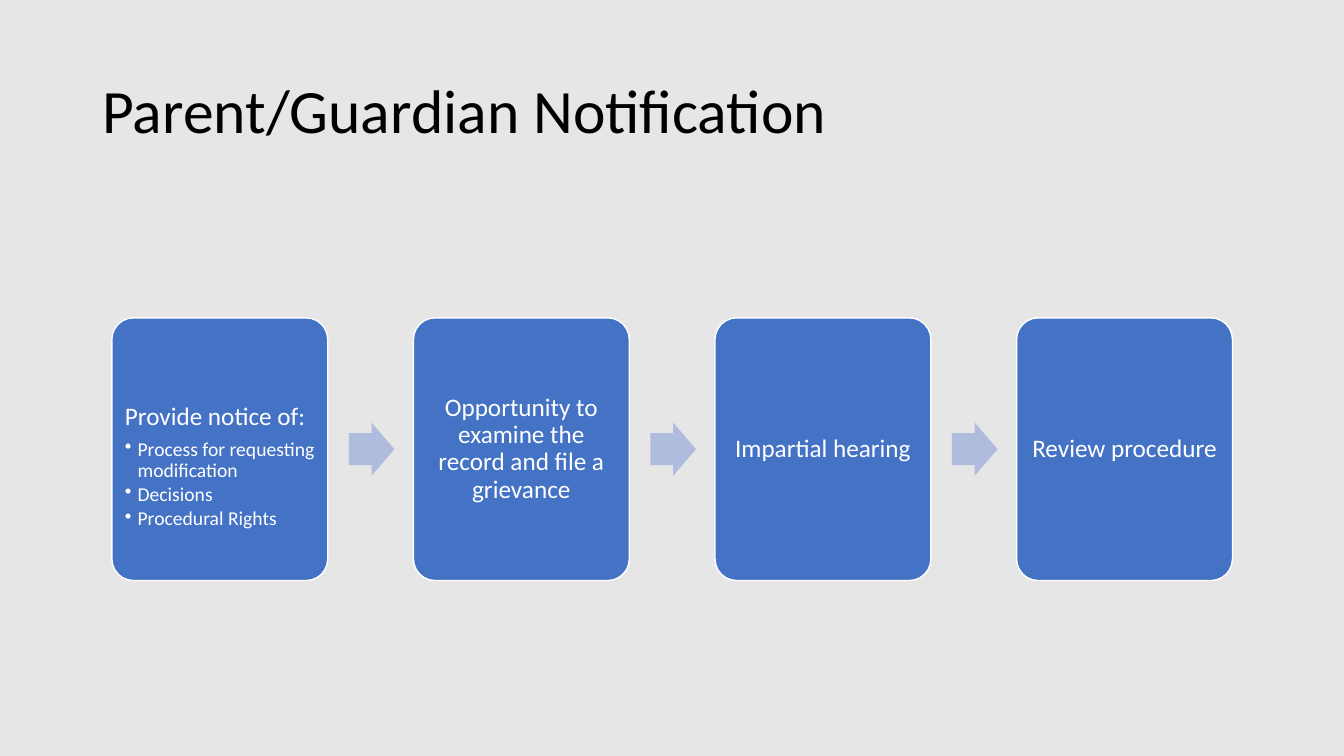
from dataclasses import dataclass

from lxml import etree
from pptx import Presentation
from pptx.dml.color import RGBColor
from pptx.enum.shapes import MSO_SHAPE
from pptx.enum.text import MSO_ANCHOR, PP_ALIGN
from pptx.oxml.ns import qn
from pptx.util import Cm, Pt

ROUNDED, ARROW = MSO_SHAPE.ROUNDED_RECTANGLE, MSO_SHAPE.RIGHT_ARROW
TOP, MIDDLE = MSO_ANCHOR.TOP, MSO_ANCHOR.MIDDLE
LEFT, CENTER = PP_ALIGN.LEFT, PP_ALIGN.CENTER


@dataclass(frozen=True)
class Theme:
    font: str = "Calibri"
    background: str = "E7E6E6"
    card: str = "4472C4"
    arrow: str = "B0BCDE"
    light: str = "FFFFFF"
    dark: str = "000000"
    title_size: int = 44
    body_size: int = 18
    bullet_size: int = 14


class Deck:
    def __init__(self, theme):
        self.theme = theme
        self.prs = Presentation()
        self.prs.slide_width, self.prs.slide_height = Cm(33.87), Cm(19.05)
        self.s = self.prs.slides.add_slide(self.prs.slide_layouts[6])
        self.paint(self.s.background.fill, theme.background)

    def paint(self, fill, color):
        fill.solid()
        fill.fore_color.rgb = RGBColor.from_string(color)

    def set_text(self, p, text, size, color, align=LEFT, after=0):
        p.text = text
        p.alignment = align
        p.line_spacing = 0.9
        p.space_after = Pt(after)
        font = p.runs[0].font
        font.name, font.size = self.theme.font, Pt(size)
        font.color.rgb = RGBColor.from_string(color)

    def title(self, text, x, y, w, h):
        tf = self.s.shapes.add_textbox(Cm(x), Cm(y), Cm(w), Cm(h)).text_frame
        tf.word_wrap = True
        tf.vertical_anchor = MIDDLE
        self.set_text(tf.paragraphs[0], text, self.theme.title_size, self.theme.dark)

    def block(self, kind, x, y, w, h, color, adjustments):
        sp = self.s.shapes.add_shape(kind, Cm(x), Cm(y), Cm(w), Cm(h))
        sp.shadow.inherit = False
        for i, value in enumerate(adjustments):
            sp.adjustments[i] = value
        self.paint(sp.fill, color)
        sp.line.fill.background()
        return sp

    def card(self, text, bullets, x, y, w, h):
        t = self.theme
        sp = self.block(ROUNDED, x, y, w, h, t.card, [0.1])
        self.paint(sp.line.fill, t.light)
        sp.line.width = Pt(1)
        tf = sp.text_frame
        tf.word_wrap = True
        tf.margin_left = tf.margin_right = tf.margin_bottom = Cm(0.17)
        tf.margin_top = Cm(2) if bullets else Cm(0.17)
        tf.vertical_anchor = TOP if bullets else MIDDLE
        align = LEFT if bullets else CENTER
        self.set_text(tf.paragraphs[0], text, t.body_size, t.light, align, 6.3)
        for item in bullets:
            p = tf.add_paragraph()
            self.set_text(p, item, t.bullet_size, t.light, LEFT, 2.1)
            self.bullet(p)

    def bullet(self, p):
        p.level = 1
        pPr = p._p.get_or_add_pPr()
        pPr.set("marL", str(Cm(0.32)))
        pPr.set("indent", str(Cm(-0.32)))
        etree.SubElement(pPr, qn("a:buChar")).set("char", "•")

    def arrow(self, x, y, w, h):
        self.block(ARROW, x, y, w, h, self.theme.arrow, [0.6, 0.5])


STEPS = [
    ("Provide notice of:",
     ["Process for requesting modification", "Decisions", "Procedural Rights"]),
    ("Opportunity to examine the record and file a grievance", []),
    ("Impartial hearing", []),
    ("Review procedure", []),
]
CARD_X, CARD_Y, CARD_W, CARD_H = 2.82, 8.01, 5.44, 6.62
PITCH = 7.6
ARROW_W, ARROW_H, ARROW_OFFSET = 1.15, 1.34, 5.97


def main():
    deck = Deck(Theme())
    deck.title("Parent/Guardian Notification", 2.33, 1.01, 29.21, 3.68)
    for i, (text, bullets) in enumerate(STEPS):
        x = CARD_X + i * PITCH
        deck.card(text, bullets, x, CARD_Y, CARD_W, CARD_H)
        if i < len(STEPS) - 1:
            deck.arrow(x + ARROW_OFFSET, CARD_Y + (CARD_H - ARROW_H) / 2,
                       ARROW_W, ARROW_H)
    deck.prs.save("out.pptx")


if __name__ == "__main__":
    main()
